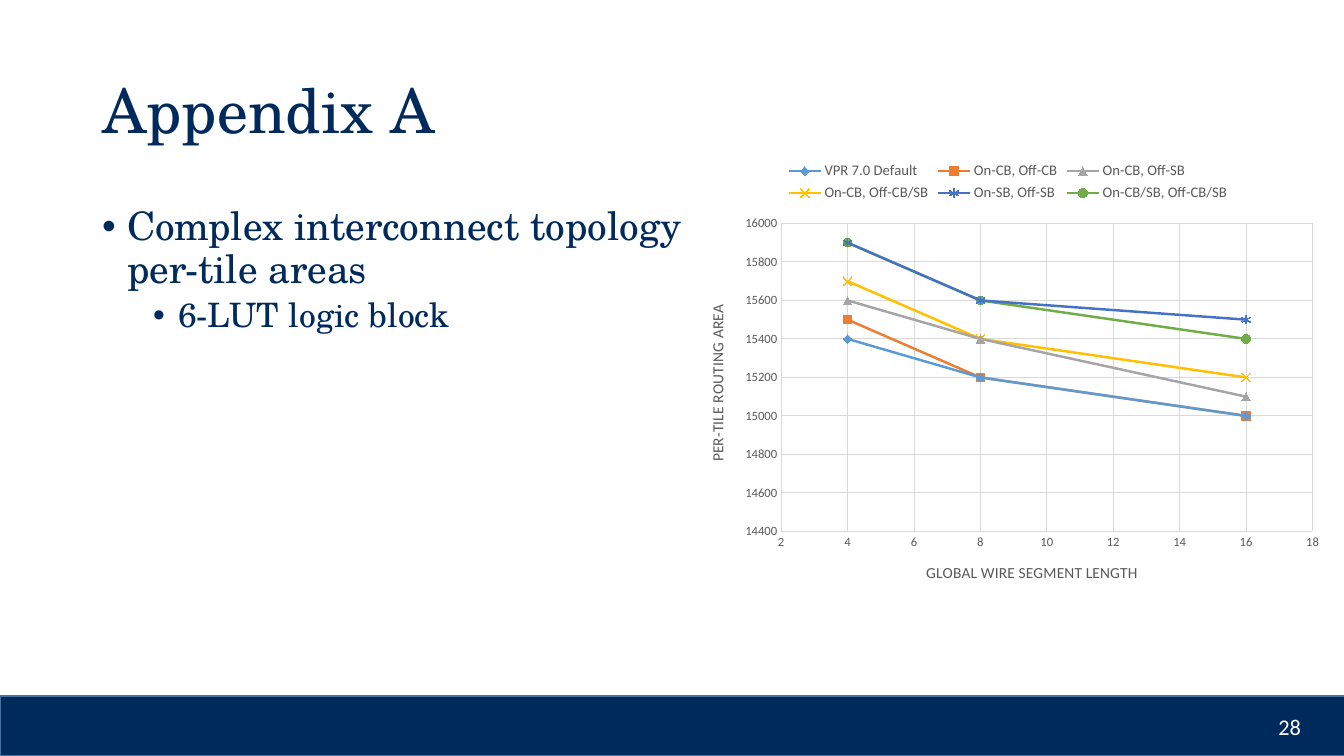
import pptx
import pptx.chart.data
import pptx.dml.color
import pptx.enum.chart
import pptx.enum.shapes
import pptx.enum.text
import pptx.oxml
import pptx.oxml.ns
import pptx.util

PX = 914400 / 100.8  # EMU in one px
SERIF, SANS = "TeX Gyre Schola", "Calibri"
COLORS = {
    "navy": "002A5C", "band_edge": "43739E", "white": "FFFFFF",
    "label": "595959", "grid": "D9D9D9", "blue": "5B9BD5", "orange": "ED7D31",
    "gray": "A5A5A5", "gold": "FFC000", "indigo": "4472C4", "green": "70AD47",
}
MARKERS = pptx.enum.chart.XL_MARKER_STYLE
ALIGN = pptx.enum.text.PP_ALIGN
WIRE_LENGTHS = (4, 8, 16)
# Name, colour, marker, marker is filled, areas at each wire length
SERIES = [
    ("VPR 7.0 Default", "blue", MARKERS.DIAMOND, True, (15400, 15200, 15000)),
    ("On-CB, Off-CB", "orange", MARKERS.SQUARE, True, (15500, 15200, 15000)),
    ("On-CB, Off-SB", "gray", MARKERS.TRIANGLE, True, (15600, 15400, 15100)),
    ("On-CB, Off-CB/SB", "gold", MARKERS.X, False, (15700, 15400, 15200)),
    ("On-SB, Off-SB", "indigo", MARKERS.STAR, False, (15900, 15600, 15500)),
    ("On-CB/SB, Off-CB/SB", "green", MARKERS.CIRCLE, True, (15900, 15600, 15400)),
]


def px(*lengths):
    return [pptx.util.Emu(round(length * PX)) for length in lengths]


def rgb(name):
    return pptx.dml.color.RGBColor.from_string(COLORS[name])


def format_font(font, size, color, name=SANS):
    font.size, font.name, font.bold = pptx.util.Pt(size), name, False
    font.color.rgb = rgb(color)


def format_line(line, color, width):
    line.color.rgb = rgb(color)
    line.width = pptx.util.Pt(width)


def write_text(para, text, size=18, color="navy", font=SERIF, align=ALIGN.LEFT,
               spacing=0.9, before=0):
    span = para.add_run()
    span.text = text
    format_font(span.font, size, color, font)
    para.alignment, para.line_spacing = align, spacing
    para.space_before = pptx.util.Pt(before)


def place(box, left, top, width, height):
    box.left, box.top, box.width, box.height = px(left, top, width, height)


def set_frame(box, anchor):
    frame = box.text_frame
    frame.word_wrap = True
    frame.auto_size = pptx.enum.text.MSO_AUTO_SIZE.NONE
    frame.vertical_anchor = anchor
    return frame


def add_bullet(para, indent):
    props = para._p.get_or_add_pPr()
    props.set("marL", str(px(indent)[0]))
    props.set("indent", str(px(-25)[0]))
    props.append(pptx.oxml.parse_xml(
        f'<a:buFont {pptx.oxml.ns.nsdecls("a")} typeface="Arial"/>'))
    props.append(pptx.oxml.parse_xml(
        f'<a:buChar {pptx.oxml.ns.nsdecls("a")} char="•"/>'))


def add_band(page):
    shape = page.shapes.add_shape(
        pptx.enum.shapes.MSO_SHAPE.RECTANGLE, *px(0, 696, 1346, 60))
    shape.shadow.inherit = False
    shape.fill.solid()
    shape.fill.fore_color.rgb = rgb("navy")
    format_line(shape.line, "band_edge", 1)


def format_axis(axis, title, low, high, step):
    axis.minimum_scale, axis.maximum_scale, axis.major_unit = low, high, step
    axis.has_major_gridlines = True
    format_line(axis.major_gridlines.format.line, "grid", 0.75)
    format_line(axis.format.line, "grid", 0.75)
    axis.major_tick_mark = axis.minor_tick_mark = pptx.enum.chart.XL_TICK_MARK.NONE
    axis.tick_label_position = pptx.enum.chart.XL_TICK_LABEL_POSITION.NEXT_TO_AXIS
    format_font(axis.tick_labels.font, 9, "label")
    axis.tick_labels.number_format = "General"
    axis.tick_labels.number_format_is_linked = False
    span = axis.axis_title.text_frame.paragraphs[0].add_run()
    span.text = title
    format_font(span.font, 11, "label")


def set_plot_area(chart, **fractions):
    parts = "".join(f'<c:{key} val="{value}"/>' for key, value in fractions.items())
    layout = pptx.oxml.parse_xml(
        f'<c:layout {pptx.oxml.ns.nsdecls("c")}><c:manualLayout>'
        '<c:layoutTarget val="inner"/><c:xMode val="edge"/><c:yMode val="edge"/>'
        f'{parts}</c:manualLayout></c:layout>')
    area = chart._chartSpace.chart.plotArea
    for old in area.findall(pptx.oxml.ns.qn("c:layout")):
        area.remove(old)
    area.insert(0, layout)


def add_area_chart(page):
    data = pptx.chart.data.XyChartData()
    for name, _, _, _, areas in SERIES:
        points = data.add_series(name)
        for length, area in zip(WIRE_LENGTHS, areas):
            points.add_data_point(length, area)
    chart = page.shapes.add_chart(
        pptx.enum.chart.XL_CHART_TYPE.XY_SCATTER_LINES,
        *px(684, 151, 648, 453), data).chart
    format_font(chart.font, 10, "label")
    chart.has_title = False
    chart.plots[0].vary_by_categories = False

    # Legend, axes and plot area
    chart.has_legend = True
    chart.legend.position = pptx.enum.chart.XL_LEGEND_POSITION.TOP
    chart.legend.include_in_layout = False
    format_font(chart.legend.font, 10.5, "label")
    format_axis(chart.category_axis, "GLOBAL WIRE SEGMENT LENGTH", 2, 18, 2)
    format_axis(chart.value_axis, "PER-TILE ROUTING AREA", 14400, 16000, 200)
    set_plot_area(chart, x=0.15, y=0.16, w=0.82, h=0.68)

    # Lines and markers
    for series, (_, color, style, filled, _) in zip(chart.plots[0].series, SERIES):
        series.smooth = False
        format_line(series.format.line, color, 1.75)
        marker = series.marker
        marker.style, marker.size = style, 6
        format_line(marker.format.line, color, 0.75)
        if filled:
            marker.format.fill.solid()
            marker.format.fill.fore_color.rgb = rgb(color)
        else:
            marker.format.fill.background()


def main():
    deck = pptx.Presentation()
    deck.slide_width, deck.slide_height = px(1344, 756)
    page = deck.slides.add_slide(deck.slide_layouts[1])
    title, body = page.placeholders
    middle = pptx.enum.text.MSO_ANCHOR.MIDDLE

    # Title
    place(title, 92, 41, 1159, 146)
    write_text(set_frame(title, middle).paragraphs[0], "Appendix A", size=44)

    # Bullets
    place(body, 92, 202, 615, 480)
    frame = set_frame(body, pptx.enum.text.MSO_ANCHOR.TOP)
    topic, detail = frame.paragraphs[0], frame.add_paragraph()
    detail.level = 1
    add_bullet(topic, 25)
    add_bullet(detail, 76)
    write_text(topic, "Complex interconnect topology per-tile areas", size=28)
    write_text(detail, "6-LUT logic block", size=24, before=5)

    add_area_chart(page)

    # Footer band with the page number
    add_band(page)
    box = page.shapes.add_textbox(*px(1009, 707, 302, 40))
    write_text(set_frame(box, middle).paragraphs[0], "28", size=16, color="white",
               font=SANS, align=ALIGN.RIGHT, spacing=1.0)

    deck.save("out.pptx")


if __name__ == "__main__":
    main()
